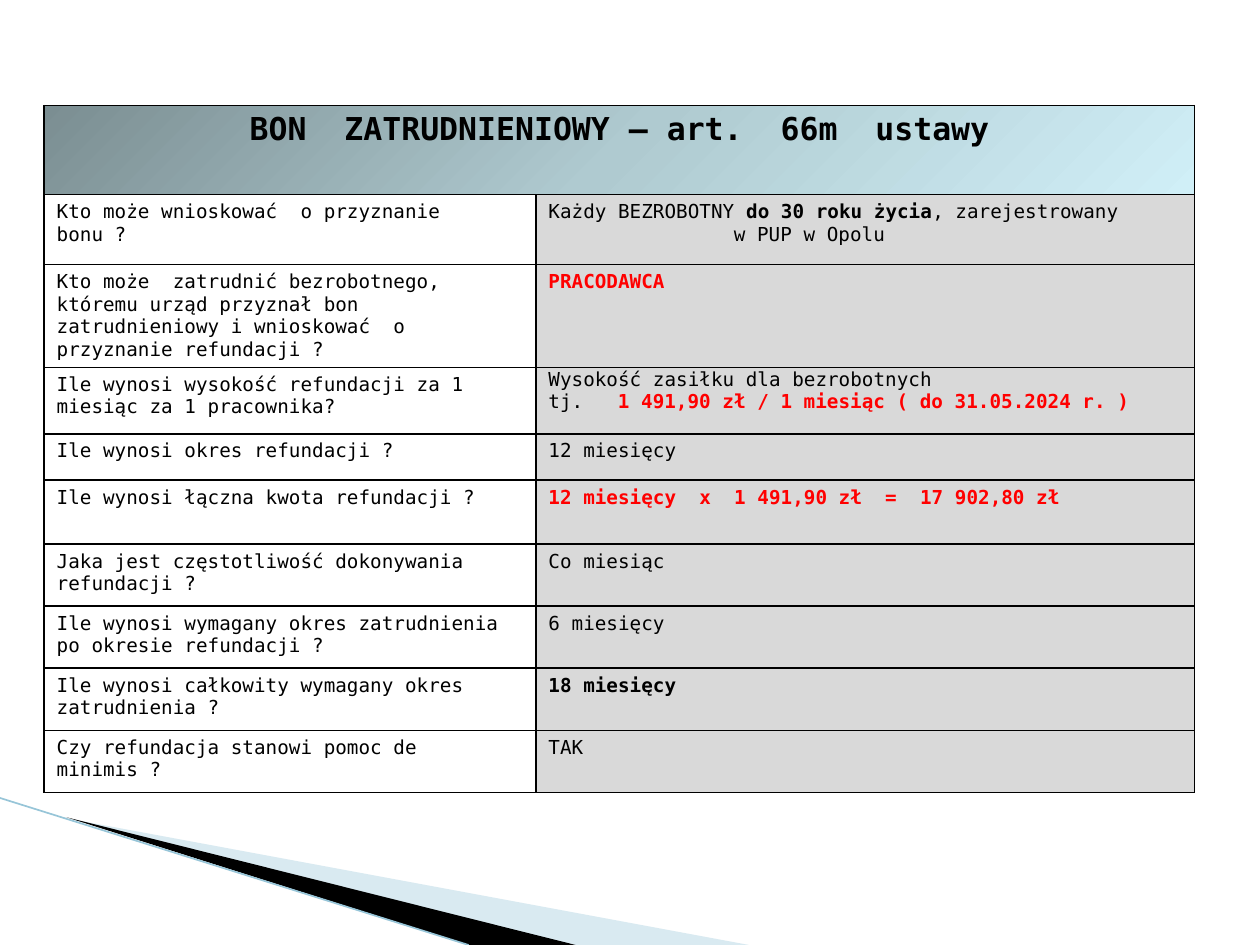
from lxml import etree
from pptx import Presentation
from pptx.dml.color import RGBColor
from pptx.enum import shapes, text
from pptx.oxml.ns import qn
from pptx.util import Pt

FONT = "DejaVu Sans Mono"
BLACK, RED, WHITE, GREY = "000000", "FF0000", "FFFFFF", "D9D9D9"

TITLE = "BON  ZATRUDNIENIOWY – art.  66m  ustawy"
# Each answer is a list of paragraphs; each paragraph a list of (text, style)
ROWS = [
    ("Kto może wnioskować  o przyznanie  bonu ?",
     [[("Każdy BEZROBOTNY ", ""), ("do 30 roku życia", "bold"), (", zarejestrowany", "")],
      [("w PUP w Opolu", "")]]),
    ("Kto może  zatrudnić bezrobotnego,  któremu urząd przyznał bon "
     "zatrudnieniowy i wnioskować  o przyznanie refundacji ?",
     [[("PRACODAWCA", "red")]]),
    ("Ile wynosi wysokość refundacji za 1 miesiąc za 1 pracownika?",
     [[("Wysokość zasiłku dla bezrobotnych", "")],
      [("tj.\t", ""), ("1 491,90 zł / 1 miesiąc ( do 31.05.2024 r. )", "red")]]),
    ("Ile wynosi okres refundacji ?", [[("12 miesięcy", "")]]),
    ("Ile wynosi łączna kwota refundacji ?",
     [[("12 miesięcy  x  1 491,90 zł  =  17 902,80 zł", "red")]]),
    ("Jaka jest częstotliwość dokonywania refundacji ?", [[("Co miesiąc", "")]]),
    ("Ile wynosi wymagany okres zatrudnienia po okresie refundacji ?",
     [[("6 miesięcy", "")]]),
    ("Ile wynosi całkowity wymagany okres zatrudnienia ?", [[("18 miesięcy", "bold")]]),
    ("Czy refundacja stanowi pomoc de minimis ?", [[("TAK", "")]]),
]
LEFT, TOP = 25.2, 60.3
COLS = [281, 376.5]
HEIGHTS = [51, 40, 58.5, 38, 26.5, 36.5] + [35.5] * 4
GRADIENT = [(0, "7B8E92"), (50, "AFCAD0"), (100, "D0EFF7")]
REFUND_ROW = 3

# Corner wedges: colour, opacity in percent, outline
WEDGES = [
    ("A0CBDC", 40, [(39.6, 468.5), (428.4, 540), (328.3, 540)]),
    (BLACK, 100, [(38.2, 467.3), (329, 540), (267.8, 540)]),
]
EDGE = ("97C5D8", 0.95, (0, 456), (267.8, 540))


def rgb(color):
    return RGBColor.from_string(color)


def sub(parent, tag, **attrs):
    return etree.SubElement(parent, qn(tag), attrs)


def solid(parent, color):
    return sub(sub(parent, "a:solidFill"), "a:srgbClr", val=color)


def add_wedge(s, color, opacity, points):
    builder = s.shapes.build_freeform(*points[0], scale=Pt(1))
    builder.add_line_segments(points[1:], close=True)
    sp = builder.convert_to_shape()
    sp.shadow.inherit = False
    sp.line.fill.background()
    sp.fill.solid()
    sp.fill.fore_color.rgb = rgb(color)
    if opacity < 100:
        clr = sp.fill._xPr.find(qn("a:solidFill"))[0]
        sub(clr, "a:alpha", val=str(opacity * 1000))


def add_edge(s, color, width, start, end):
    line = s.shapes.add_connector(shapes.MSO_CONNECTOR.STRAIGHT,
                                  *map(Pt, start + end))
    line.line.color.rgb = rgb(color)
    line.line.width = Pt(width)
    sub(line._element.spPr, "a:effectLst")


def style_cell(cell, fill):
    """Black borders, then a solid fill or a list of gradient stops."""
    tc_pr = cell._tc.get_or_add_tcPr()
    for side in "LRTB":
        solid(sub(tc_pr, "a:ln" + side, w=str(Pt(1))), BLACK)
    if isinstance(fill, str):
        solid(tc_pr, fill)
        return
    grad = sub(tc_pr, "a:gradFill", rotWithShape="1")
    stops = sub(grad, "a:gsLst")
    for pos, color in fill:
        sub(sub(stops, "a:gs", pos=str(pos * 1000)), "a:srgbClr", val=color)
    sub(grad, "a:lin", ang=str(45 * 60000), scaled="0")


def set_font(p, size, bold=False):
    p.font.name, p.font.size, p.font.bold = FONT, Pt(size), bold
    p.font.color.rgb = rgb(BLACK)


def write(cell, paragraphs, size=11):
    tf = cell.text_frame
    for i, runs in enumerate(paragraphs):
        p = tf.paragraphs[0] if i == 0 else tf.add_paragraph()
        if runs[0][0].endswith("\t"):
            tabs = sub(p._p.get_or_add_pPr(), "a:tabLst")
            sub(tabs, "a:tab", pos=str(Pt(39.7)), algn="l")
        set_font(p, size)
        for content, style in runs:
            r = p.add_run()
            r.text = content
            if style:
                r.font.bold = True
            if style == "red":
                r.font.color.rgb = rgb(RED)


prs = Presentation()
prs.slide_width, prs.slide_height = Pt(720), Pt(540)
s = prs.slides.add_slide(prs.slide_layouts[6])

# Corner decoration
for wedge in WEDGES:
    add_wedge(s, *wedge)
add_edge(s, *EDGE)

# Table grid
table = s.shapes.add_table(len(HEIGHTS), len(COLS), Pt(LEFT), Pt(TOP),
                           Pt(sum(COLS)), Pt(sum(HEIGHTS))).table
table.horz_banding = False
for column, width in zip(table.columns, COLS):
    column.width = Pt(width)
for row, height in zip(table.rows, HEIGHTS):
    row.height = Pt(height)

# Heading row
head = table.cell(0, 0)
head.merge(table.cell(0, 1))
write(head, [[(TITLE, "bold")]], 18)
head.text_frame.paragraphs[0].alignment = text.PP_ALIGN.CENTER
for cell in table.rows[0].cells:
    style_cell(cell, GRADIENT)

# Questions and answers
for i, (question, answer) in enumerate(ROWS, 1):
    for j, (content, fill) in enumerate([([[(question, "")]], WHITE), (answer, GREY)]):
        cell = table.cell(i, j)
        if (i, j) == (REFUND_ROW, 1):
            cell.margin_top, cell.margin_bottom = Pt(0.7), Pt(0)
        write(cell, content)
        style_cell(cell, fill)

# Second line of the first answer is set in
table.cell(1, 1).text_frame.paragraphs[1]._p.get_or_add_pPr().set("marL", str(Pt(106)))

prs.save("out.pptx")
